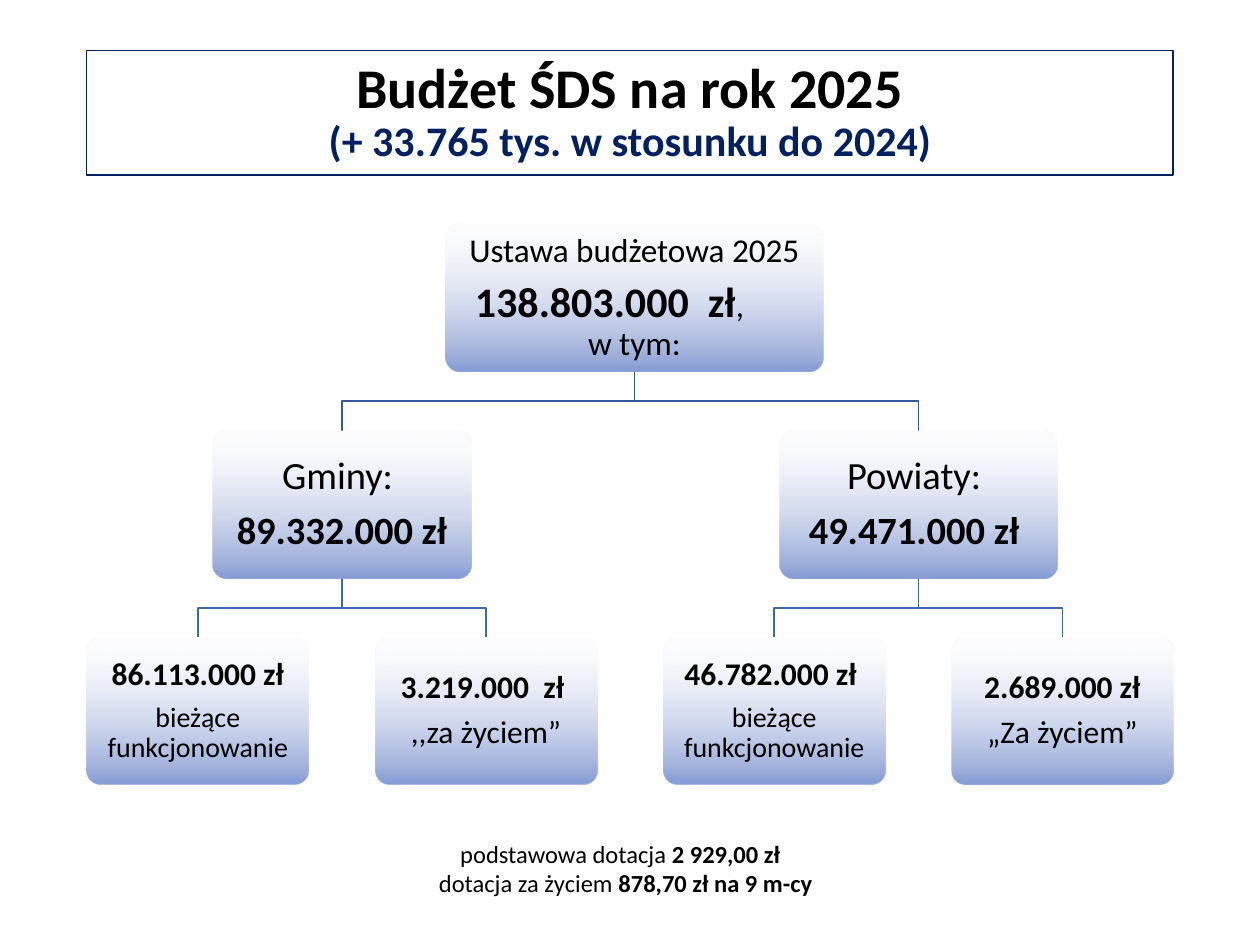
from dataclasses import dataclass

from lxml import etree
from pptx import Presentation
from pptx.dml.color import RGBColor
from pptx.enum.shapes import MSO_SHAPE
from pptx.enum.text import MSO_ANCHOR, PP_ALIGN
from pptx.oxml.ns import qn
from pptx.util import Cm, Pt

ROUNDED = MSO_SHAPE.ROUNDED_RECTANGLE
RECTANGLE = MSO_SHAPE.RECTANGLE
MIDDLE = MSO_ANCHOR.MIDDLE
CENTER, LEFT = PP_ALIGN.CENTER, PP_ALIGN.LEFT

FONT = "Calibri"
BLACK, NAVY = "000000", "002060"
ROOT_LINE, BRANCH_LINE = "365B9D", "3E67B2"
# Position in percent, colour, opacity in percent
GRADIENT = [(4, "F9FAFD", 30), (92, "9AABD9", 100), (97, "889ED7", 100)]

# Tree layout in centimetres
BOX_HEIGHT = 2.97
LEVEL_TOPS = [4.52, 8.69, 12.85]
FIRST_LEAF, LEAF_STEP, LEAF_WIDTH = 3.99, 5.81, 4.47
LEAVES = [FIRST_LEAF + LEAF_STEP * index for index in range(4)]
GMINY, POWIATY = sum(LEAVES[:2]) / 2, sum(LEAVES[2:]) / 2
ROOT = 12.79


@dataclass
class Span:
    text: str
    size: float
    bold: bool = False
    color: str = BLACK


@dataclass
class Line:
    spans: list[Span]
    after: float = 0
    align: PP_ALIGN = CENTER
    indent: float = 0


@dataclass
class Box:
    center: float
    level: int
    width: float
    inset: float
    lines: list[Line]


@dataclass
class Branch:
    start: float
    end: float
    level: int
    color: str


def rgb(color: str) -> RGBColor:
    return RGBColor.from_string(color)


def write(shape, lines: list[Line], *, spacing=0.9, anchor=MIDDLE, inset=None) -> None:
    frame = shape.text_frame
    frame.word_wrap = True
    frame.vertical_anchor = anchor
    if inset is not None:
        frame.margin_left = frame.margin_right = Cm(inset)
        frame.margin_top = frame.margin_bottom = Cm(inset)
    for index, line in enumerate(lines):
        paragraph = frame.add_paragraph() if index else frame.paragraphs[0]
        paragraph.alignment = line.align
        paragraph.line_spacing = spacing
        paragraph.space_after = Pt(line.after)
        if line.indent:
            paragraph._p.get_or_add_pPr().set("marL", str(Cm(line.indent)))
        for span in line.spans:
            if span.text == "\n":
                paragraph.add_line_break()
                continue
            run = paragraph.add_run()
            run.text = span.text
            run.font.name = FONT
            run.font.size = Pt(span.size)
            run.font.bold = span.bold
            run.font.color.rgb = rgb(span.color)


def fill_gradient(shape) -> None:
    shape.fill.gradient()
    shape.fill.gradient_angle = 270  # counter-clockwise: runs from top to bottom
    stops = shape._element.spPr.find(qn("a:gradFill")).find(qn("a:gsLst"))
    for stop in list(stops):
        stops.remove(stop)
    for position, color, opacity in GRADIENT:
        stop = etree.SubElement(stops, qn("a:gs"), pos=str(position * 1000))
        fill = etree.SubElement(stop, qn("a:srgbClr"), val=color)
        if opacity < 100:
            etree.SubElement(fill, qn("a:alpha"), val=str(opacity * 1000))


def draw_box(slide, box: Box) -> None:
    shape = slide.shapes.add_shape(
        ROUNDED, Cm(box.center - box.width / 2), Cm(LEVEL_TOPS[box.level]),
        Cm(box.width), Cm(BOX_HEIGHT))
    shape.adjustments[0] = 0.1
    shape.shadow.inherit = False
    shape.line.fill.background()
    fill_gradient(shape)
    write(shape, box.lines, inset=box.inset)


def draw_branch(slide, branch: Branch) -> None:
    top = LEVEL_TOPS[branch.level] + BOX_HEIGHT
    bottom = LEVEL_TOPS[branch.level + 1]
    middle = (top + bottom) / 2
    builder = slide.shapes.build_freeform(Cm(branch.start), Cm(top))
    corners = [(branch.start, middle), (branch.end, middle), (branch.end, bottom)]
    builder.add_line_segments([(Cm(x), Cm(y)) for x, y in corners], close=False)
    shape = builder.convert_to_shape()
    shape.shadow.inherit = False
    shape.fill.background()
    shape.line.color.rgb = rgb(branch.color)
    shape.line.width = Pt(1)


def parent_box(center: float, width: float, name: str, amount: str) -> Box:
    return Box(center, 1, width, 0.32, [
        Line([Span(name, 22)], 7.7), Line([Span(amount, 22, True)], 7.7)])


def leaf_box(center: float, amount: str, purpose: str, size: float) -> Box:
    return Box(center, 2, LEAF_WIDTH, 0.27, [
        Line([Span(amount, 18, True)], 6.3), Line([Span(purpose, size)], 6)])


BOXES = [
    Box(ROOT, 0, 7.6, 0.3, [
        Line([Span("Ustawa budżetowa 2025", 19)], 6.65),
        Line([Span("138.803.000  zł", 24, True), Span(",", 19)],
             align=LEFT, indent=0.2),
        Line([Span("w tym:", 19)], 6.65)]),
    parent_box(GMINY, 5.21, "Gminy: ", "89.332.000 zł "),
    parent_box(POWIATY, 5.59, "Powiaty: ", "49.471.000 zł "),
    leaf_box(LEAVES[0], "86.113.000 zł", "bieżące funkcjonowanie", 16),
    leaf_box(LEAVES[1], "3.219.000  zł ", ",,za życiem”", 18),
    leaf_box(LEAVES[2], "46.782.000 zł ", "bieżące funkcjonowanie", 16),
    leaf_box(LEAVES[3], "2.689.000 zł", "„Za życiem”", 18),
]
BRANCHES = [Branch(ROOT, parent, 0, ROOT_LINE) for parent in (GMINY, POWIATY)] + [
    Branch(parent, leaf, 1, BRANCH_LINE)
    for parent, leaves in ((GMINY, LEAVES[:2]), (POWIATY, LEAVES[2:]))
    for leaf in leaves
]


def main() -> None:
    presentation = Presentation()
    presentation.slide_width, presentation.slide_height = Cm(25.4), Cm(19.05)
    slide = presentation.slides.add_slide(presentation.slide_layouts[6])

    # Budget tree
    for branch in BRANCHES:
        draw_branch(slide, branch)
    for box in BOXES:
        draw_box(slide, box)

    # Framed title
    title = slide.shapes.add_shape(RECTANGLE, Cm(1.75), Cm(1.02), Cm(21.9), Cm(2.51))
    title.shadow.inherit = False
    title.fill.background()
    title.line.color.rgb = rgb(NAVY)
    title.line.width = Pt(0.75)
    write(title, [Line([
        Span("Budżet ŚDS na rok 2025", 32, True), Span("\n", 32),
        Span("(+ 33.765 tys. w stosunku do 2024)", 24, True, NAVY)])])

    # Subsidy rates
    rates = slide.shapes.add_textbox(Cm(1.65), Cm(16.79), Cm(21.82), Cm(1.45))
    write(rates, [
        Line([Span("podstawowa dotacja ", 14), Span("2 929,00 zł ", 14, True)]),
        Line([Span(" dotacja za życiem ", 14), Span("878,70 zł na 9 m-cy", 14, True)]),
    ], spacing=1.0, anchor=MSO_ANCHOR.TOP)

    presentation.save("out.pptx")


if __name__ == "__main__":
    main()
